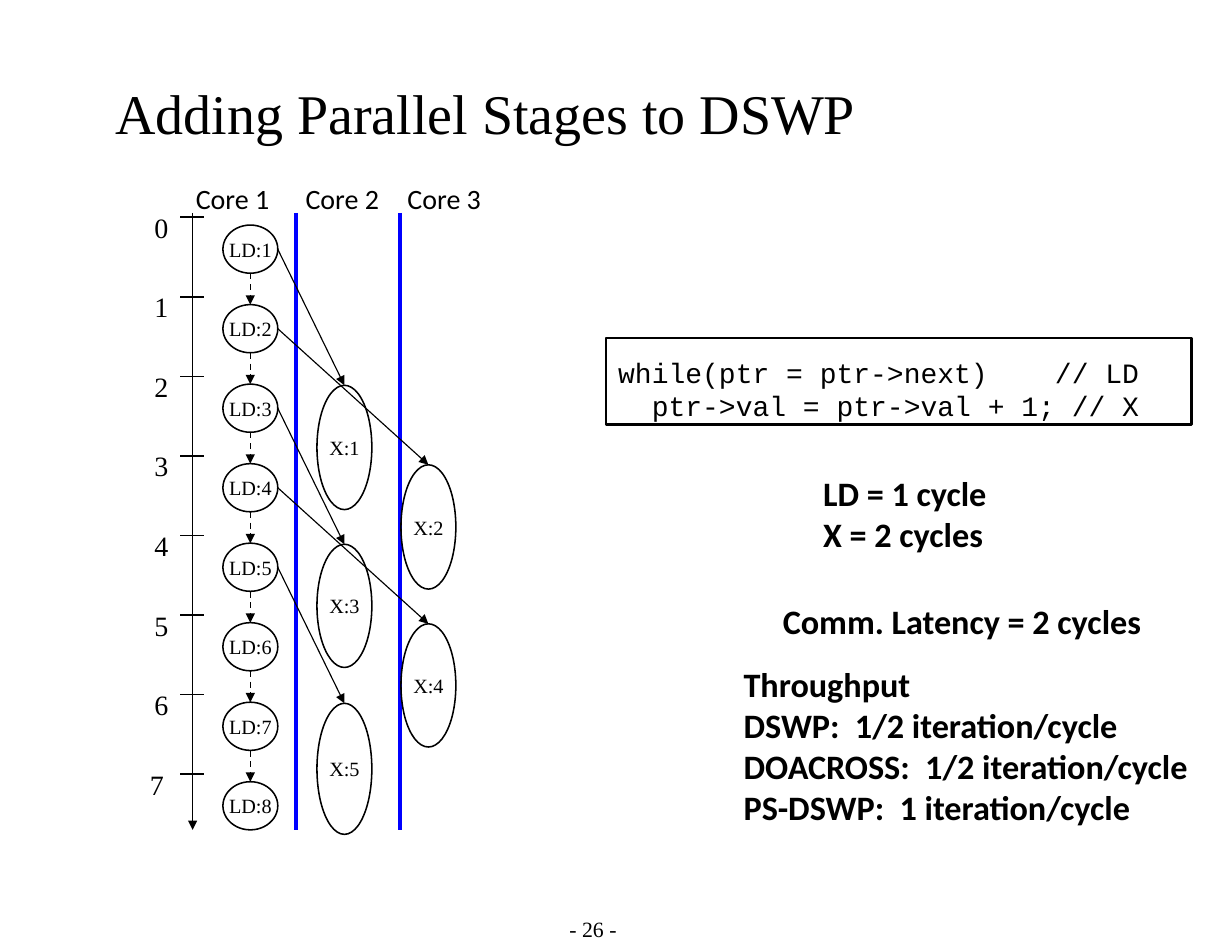
from dataclasses import dataclass

from lxml.etree import SubElement
from pptx import Presentation
from pptx.dml.color import RGBColor
from pptx.enum.dml import MSO_LINE
from pptx.enum.shapes import MSO_CONNECTOR, MSO_SHAPE
from pptx.enum.text import MSO_ANCHOR, MSO_AUTO_SIZE, PP_ALIGN
from pptx.oxml.ns import qn
from pptx.util import Inches, Pt


@dataclass(frozen=True)
class Theme:
    """Colours, fonts and type sizes of the slide."""

    ink: RGBColor = RGBColor(0, 0, 0)
    paper: RGBColor = RGBColor(255, 255, 255)
    divider: RGBColor = RGBColor(0, 0, 255)
    serif: str = "Times New Roman"
    sans: str = "Calibri"
    mono: str = "Courier New"
    title: int = 36
    note: int = 22
    label: int = 18
    page: int = 14
    node: int = 13


THEME = Theme()
PITCH = 0.71
CYCLES = 8
TICK_TOP = 1.94
LOAD_LEFT, LOAD_TOP = 1.99, 2.01
NODE_W, LOAD_H = 0.49, 0.43
EXEC_DELAY = 1.43


def write(tf, lines, font, size, bold=False, align=PP_ALIGN.LEFT,
          anchor=MSO_ANCHOR.TOP, wrap=True, inset=(0.1, 0.05)):
    """Fill a text frame with one paragraph per line."""
    tf.auto_size = MSO_AUTO_SIZE.NONE
    tf.word_wrap = wrap
    tf.vertical_anchor = anchor
    tf.margin_left = tf.margin_right = Inches(inset[0])
    tf.margin_top = tf.margin_bottom = Inches(inset[1])
    for i, line in enumerate(lines):
        p = tf.add_paragraph() if i else tf.paragraphs[0]
        p.alignment = align
        r = p.add_run()
        r.text = line
        r.font.name = font
        r.font.size = Pt(size)
        r.font.bold = bold
        r.font.color.rgb = THEME.ink


def add_text(s, box, lines, font, size, **style):
    """Add a text box at (left, top, width, height)."""
    sp = s.shapes.add_textbox(*map(Inches, box))
    write(sp.text_frame, lines, font, size, **style)


def add_outlined(s, preset, box, width):
    """Add an unfilled preset shape with a black outline."""
    sp = s.shapes.add_shape(preset, *map(Inches, box))
    sp.shadow.inherit = False
    sp.fill.background()
    sp.line.color.rgb = THEME.ink
    sp.line.width = Pt(width)
    return sp


def add_node(s, text, left, top, height):
    """Add an elliptical instruction node."""
    sp = add_outlined(s, MSO_SHAPE.OVAL, (left, top, NODE_W, height), 1)
    write(sp.text_frame, [text], THEME.serif, THEME.node,
          align=PP_ALIGN.CENTER, anchor=MSO_ANCHOR.MIDDLE, wrap=False)


def add_line(s, start, end, width=1, color=THEME.ink, dashed=False, arrow=False):
    """Add a straight line, optionally dashed or with an arrowhead."""
    cx = s.shapes.add_connector(MSO_CONNECTOR.STRAIGHT, *map(Inches, (*start, *end)))
    cx.line.color.rgb = color
    cx.line.width = Pt(width)
    if dashed:
        cx.line.dash_style = MSO_LINE.DASH
    if arrow:
        SubElement(cx.line._get_or_add_ln(), qn("a:tailEnd"), type="triangle")
    SubElement(cx._element.spPr, qn("a:effectLst"))


def add_title(s, text):
    """Place and format the title placeholder."""
    sp = s.shapes.title
    sp.left, sp.top, sp.width, sp.height = map(Inches, (0.92, 0.67, 8.5, 0.67))
    write(sp.text_frame, [text], THEME.serif, THEME.title,
          anchor=MSO_ANCHOR.MIDDLE, inset=(0.11, 0.06))


def add_time_axis(s):
    """Draw the downward time axis with numbered ticks."""
    for cycle in range(CYCLES):
        y = TICK_TOP + cycle * PITCH
        left = 1.24 if cycle == CYCLES - 1 else 1.28
        add_line(s, (1.61, y), (1.82, y))
        add_text(s, (left, y - 0.11, 0.25, 0.4), [str(cycle)],
                 THEME.serif, THEME.label)
    add_line(s, (1.72, 1.9), (1.72, 7.41), arrow=True)


def add_cores(s):
    """Label the core columns and draw the dividers between them."""
    for x in (2.64, 3.57):
        add_line(s, (x, 1.9), (x, 7.41), 2.5, THEME.divider)
    for core, left in enumerate((1.65, 2.63, 3.54), 1):
        add_text(s, (left, 1.57, 0.94, 0.4), [f"Core {core}"],
                 THEME.sans, THEME.label)


def add_loads(s):
    """Draw the chain of load nodes on the first core."""
    x = LOAD_LEFT + NODE_W / 2
    for i in range(CYCLES):
        top = LOAD_TOP + i * PITCH
        add_node(s, f"LD:{i + 1}", LOAD_LEFT, top, LOAD_H)
        if i < CYCLES - 1:
            add_line(s, (x, top + LOAD_H), (x, top + PITCH), dashed=True, arrow=True)


def add_executes(s):
    """Draw the execute nodes, alternating cores, with arrows from their loads."""
    for i, height in enumerate((1.11, 1.11, 1.1, 1.1, 1.17)):
        load_top = LOAD_TOP + i * PITCH
        left, top = (2.83, 3.58)[i % 2], load_top + EXEC_DELAY
        add_node(s, f"X:{i + 1}", left, top, height)
        add_line(s, (LOAD_LEFT + NODE_W, load_top + LOAD_H / 2),
                 (left + NODE_W / 2, top), 0.75, arrow=True)


def add_code(s, lines):
    """Add the framed code listing."""
    sp = add_outlined(s, MSO_SHAPE.RECTANGLE, (5.41, 3.02, 5.23, 0.77), 1.5)
    sp.fill.solid()
    sp.fill.fore_color.rgb = THEME.paper
    write(sp.text_frame, lines, THEME.mono, THEME.label, inset=(0.11, 0.15))


def add_note(s, box, lines):
    """Add a bold note."""
    add_text(s, box, lines, THEME.sans, THEME.note, bold=True,
             wrap=False, inset=(0.11, 0.06))


def main():
    """Build the slide and save it."""
    prs = Presentation()
    prs.slide_width, prs.slide_height = Inches(11), Inches(8.5)
    s = prs.slides.add_slide(prs.slide_layouts[5])
    add_title(s, "Adding Parallel Stages to DSWP")
    add_note(s, (7.24, 4.16, 1.69, 0.85), ["LD = 1 cycle", "X = 2 cycles"])
    add_code(s, ["while(ptr = ptr->next)    // LD",
                 "  ptr->val = ptr->val + 1; // X"])
    add_note(s, (6.53, 5.86, 4.24, 1.94),
             ["Throughput", "DSWP:  1/2 iteration/cycle",
              "DOACROSS:  1/2 iteration/cycle", "PS-DSWP:  1 iteration/cycle"])
    add_note(s, (6.88, 5.3, 3.44, 0.48), ["Comm. Latency = 2 cycles"])
    add_time_axis(s)
    add_cores(s)
    add_loads(s)
    add_executes(s)
    add_text(s, (4.92, 8.08, 0.75, 0.42), ["- 26 -"], THEME.serif, THEME.page,
             align=PP_ALIGN.CENTER, anchor=MSO_ANCHOR.MIDDLE, wrap=False)
    prs.save("out.pptx")


if __name__ == "__main__":
    main()
